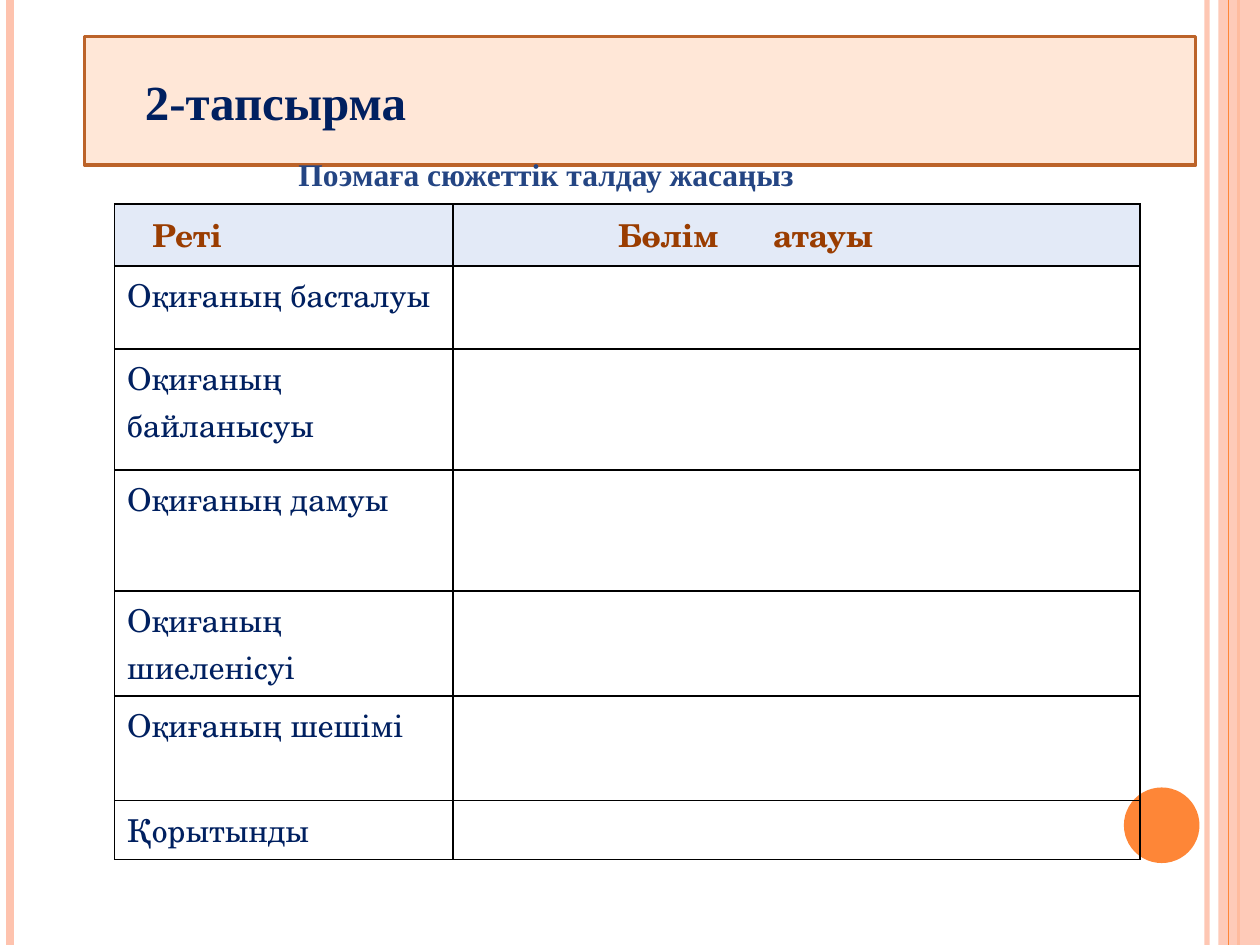
from lxml import etree
from pptx import Presentation
from pptx.dml.color import RGBColor
from pptx.enum.shapes import MSO_CONNECTOR, MSO_SHAPE
from pptx.enum.text import MSO_ANCHOR, MSO_AUTO_SIZE, PP_ALIGN
from pptx.oxml.ns import qn
from pptx.util import Inches, Pt

STRAIGHT = MSO_CONNECTOR.STRAIGHT
RECTANGLE = MSO_SHAPE.RECTANGLE
OVAL = MSO_SHAPE.OVAL
MIDDLE = MSO_ANCHOR.MIDDLE
LEFT = PP_ALIGN.LEFT
NO_AUTOFIT = MSO_AUTO_SIZE.NONE

COLORS = {
    "peach": "FEC3AE",
    "orange": "FE8637",
    "scroll": "FFE7D7",
    "scroll_edge": "BC6329",
    "navy": "002060",
    "blue": "244583",
    "header": "E3EAF7",
    "rust": "9A3D01",
    "grid": "000000",
}
SERIF = "Times New Roman"
SCHOOL = "TeX Gyre Schola"

STAGES = [
    ("Оқиғаның басталуы", 0.66),
    ("Оқиғаның байланысуы", 0.96),
    ("Оқиғаның дамуы", 0.96),
    ("Оқиғаның шиеленісуі", 0.83),
    ("Оқиғаның шешімі", 0.83),
    ("Қорытынды", 0.47),
]
HEADER_HEIGHT = 0.49
COLUMN_SHARES = (0.33, 0.67)


def rgb(name):
    return RGBColor.from_string(COLORS[name])


def set_opacity(fill_parent, percent):
    color = next(fill_parent.iter(qn("a:srgbClr")))
    etree.SubElement(color, qn("a:alpha"), val=str(percent * 1000))


def add_text(paragraph, text, font, size, color, bold=False):
    run = paragraph.add_run()
    run.text = text
    run.font.name = font
    run.font.size = Pt(size)
    run.font.bold = bold
    run.font.color.rgb = rgb(color)


def set_indent(paragraph, inches):
    properties = paragraph._p.get_or_add_pPr()
    properties.set("marL", str(Inches(inches)))
    properties.set("indent", "0")


def set_tabs(paragraph, stops):
    tabs = etree.SubElement(paragraph._p.get_or_add_pPr(), qn("a:tabLst"))
    for stop in stops:
        etree.SubElement(tabs, qn("a:tab"), pos=str(Inches(stop)), algn="l")


def add_stripe(slide, x, top, height, color, weight, opacity=100):
    stripe = slide.shapes.add_connector(
        STRAIGHT, Inches(x), Inches(top), Inches(x), Inches(top + height))
    stripe.line.color.rgb = rgb(color)
    stripe.line.width = Pt(weight)
    properties = stripe._element.spPr
    if opacity < 100:
        set_opacity(properties, opacity)
    etree.SubElement(properties, qn("a:effectLst"))


def add_block(slide, kind, left, top, width, height, color):
    block = slide.shapes.add_shape(
        kind, Inches(left), Inches(top), Inches(width), Inches(height))
    block.shadow.inherit = False
    block.fill.solid()
    block.fill.fore_color.rgb = rgb(color)
    block.line.fill.background()
    return block


def add_frame(slide, left, top, width, height):
    right = left + width
    add_stripe(slide, right - 0.42, top, height, "peach", 3, 93)
    add_stripe(slide, left + 0.08, top, height, "peach", 4.5)
    add_stripe(slide, right - 0.17, top, height, "orange", 1.5)
    band = add_block(slide, RECTANGLE, right - 0.33, top, 0.33, height, "peach")
    set_opacity(band._element.spPr, 87)
    add_stripe(slide, right - 0.25, top, height, "orange", 0.75)
    add_block(slide, OVAL, right - 1.08, top + height - 1.25, 0.6, 0.6, "orange")


def add_scroll_title(slide, left, top, width, height):
    title = slide.shapes.title
    title.left, title.top = Inches(left), Inches(top)
    title.width, title.height = Inches(width), Inches(height)
    outline = etree.SubElement(
        title._element.spPr, qn("a:prstGeom"), prst="horizontalScroll")
    etree.SubElement(outline, qn("a:avLst"))
    title.fill.solid()
    title.fill.fore_color.rgb = rgb("scroll")
    title.line.color.rgb = rgb("scroll_edge")
    title.line.width = Pt(2)
    frame = title.text_frame
    frame.auto_size = NO_AUTOFIT
    frame.vertical_anchor = MIDDLE
    heading = frame.paragraphs[0]
    heading.alignment = LEFT
    heading.space_before = Pt(6)
    set_indent(heading, 0.38)
    add_text(heading, "2-тапсырма", SERIF, 28, "navy", True)


def add_instruction(slide, left, top, width, height):
    instruction = slide.shapes.add_textbox(
        Inches(left), Inches(top), Inches(width), Inches(height))
    add_text(instruction.text_frame.paragraphs[0],
             "Поэмаға сюжеттік талдау жасаңыз", SERIF, 18, "blue", True)


def format_cell(cell, fill_color=None):
    if fill_color:
        cell.fill.solid()
        cell.fill.fore_color.rgb = rgb(fill_color)
    else:
        cell.fill.background()
    properties = cell._tc.get_or_add_tcPr()
    for position, side in enumerate(("lnL", "lnR", "lnT", "lnB")):
        border = etree.Element(qn(f"a:{side}"), w=str(Pt(1)))
        fill = etree.SubElement(border, qn("a:solidFill"))
        etree.SubElement(fill, qn("a:srgbClr"), val=COLORS["grid"])
        properties.insert(position, border)


def add_plot_table(slide, left, top, width):
    heights = [HEADER_HEIGHT] + [height for _, height in STAGES]
    table = slide.shapes.add_table(
        len(heights), len(COLUMN_SHARES), Inches(left), Inches(top),
        Inches(width), Inches(sum(heights))).table
    table.first_row = False
    table.horz_banding = False
    for column, share in zip(table.columns, COLUMN_SHARES):
        column.width = Inches(width * share)
    for index, (row, height) in enumerate(zip(table.rows, heights)):
        row.height = Inches(height)
        for cell in row.cells:
            format_cell(cell, "header" if index == 0 else None)

    order_heading = table.cell(0, 0).text_frame.paragraphs[0]
    set_indent(order_heading, 0.2)
    add_text(order_heading, "Реті", SCHOOL, 18, "rust", True)
    section_heading = table.cell(0, 1).text_frame.paragraphs[0]
    set_tabs(section_heading, (1.21, 2.44))
    add_text(section_heading, "\tБөлім\tатауы", SCHOOL, 18, "rust", True)

    for index, (stage, _) in enumerate(STAGES, start=1):
        add_text(table.cell(index, 0).text_frame.paragraphs[0],
                 stage, SCHOOL, 18, "navy")


def main():
    presentation = Presentation()
    presentation.slide_width = Inches(10)
    presentation.slide_height = Inches(7.5)
    slide = presentation.slides.add_slide(presentation.slide_layouts[5])
    add_frame(slide, 0, 0, 10, 7.5)
    add_scroll_title(slide, 0.67, 0.29, 8.82, 1.02)
    add_plot_table(slide, 0.91, 1.62, 8.14)
    add_instruction(slide, 2.27, 1.18, 4.24, 0.4)
    presentation.save("out.pptx")


if __name__ == "__main__":
    main()
